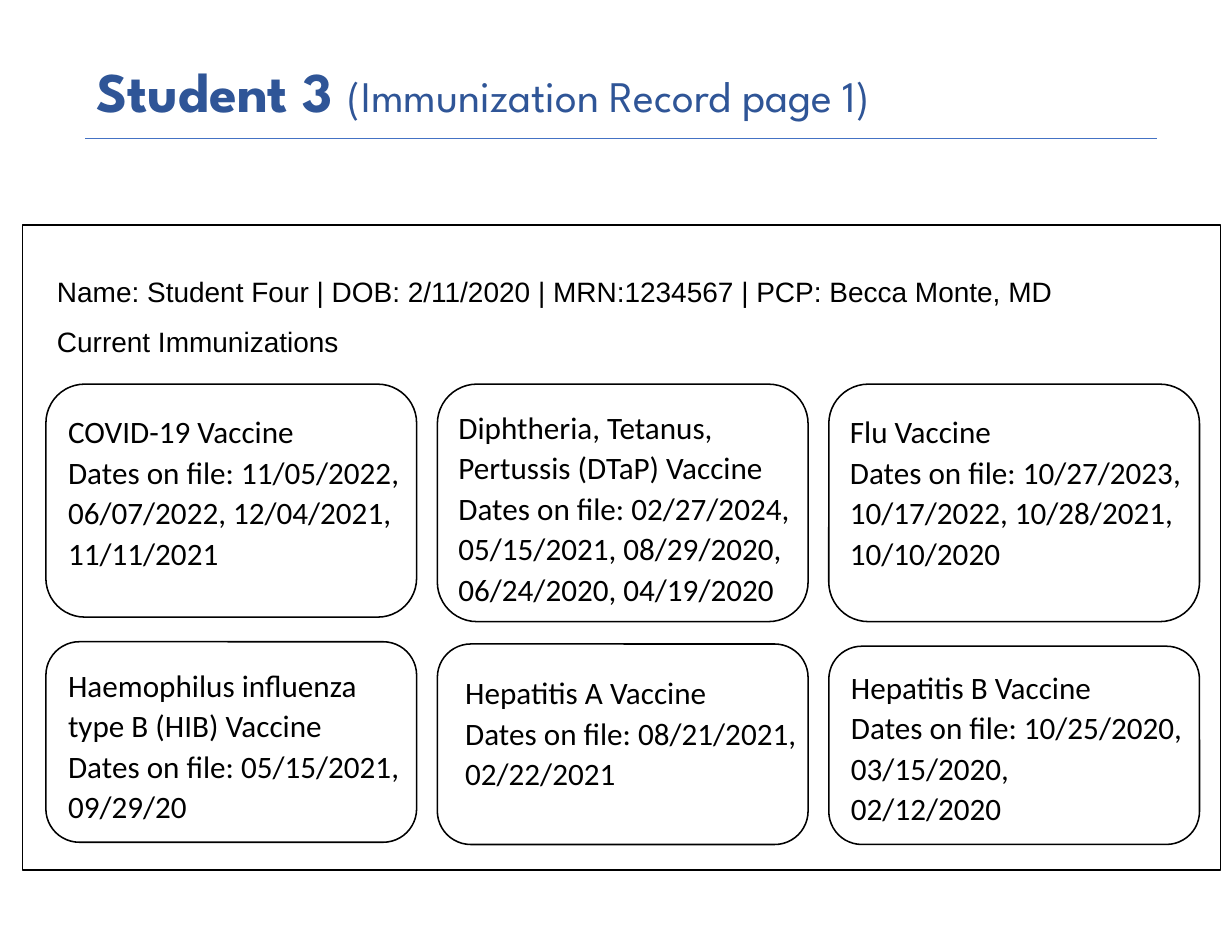
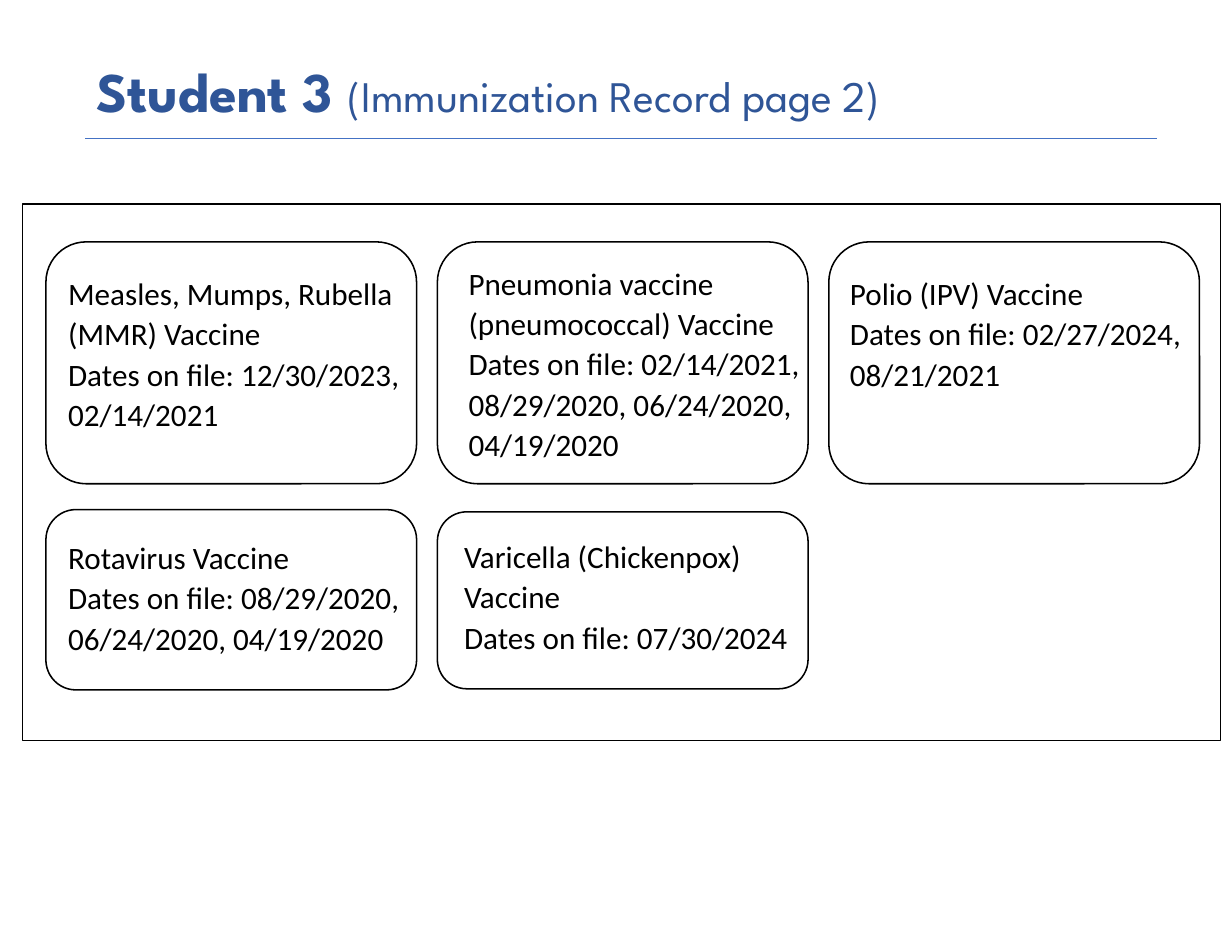
from pptx import Presentation
from pptx.dml.color import RGBColor
from pptx.enum.shapes import MSO_CONNECTOR as CONNECTOR, MSO_SHAPE as SHAPE
from pptx.enum.text import MSO_ANCHOR as ANCHOR
from pptx.util import Inches, Pt
from lxml import etree

# Shared look
BLACK, TITLE_BLUE, RULE_BLUE = "000000", "2F5597", "4472C4"
TITLE_FONT, HEADER_FONT, CARD_FONT = "League Spartan", "Arial", "Calibri"
COLUMNS = [0.41 + 3.495 * column for column in range(3)]
CARD_WIDTH, CARD_TEXT_WIDTH = 3.31, 3.2
DRAWING_NS = "http://schemas.openxmlformats.org/drawingml/2006/main"


def add_text(slide, text, left, top, width, height, font, size, color=BLACK,
             spacing=None, anchor=ANCHOR.TOP, lead="", lead_size=None):
    """Add one paragraph per line; a bold lead may open the first one."""
    box = slide.shapes.add_textbox(*map(Inches, (left, top, width, height)))
    frame = box.text_frame
    frame.word_wrap = True
    frame.vertical_anchor = anchor
    for index, line in enumerate(text.split("\n")):
        paragraph = frame.paragraphs[0] if index == 0 else frame.add_paragraph()
        paragraph.line_spacing = spacing
        pieces = [(line, size, False)]
        if lead and index == 0:
            pieces.insert(0, (lead, lead_size, True))
        for words, points, bold in pieces:
            run = paragraph.add_run()
            run.text = words
            run.font.name = font
            run.font.size = Pt(points)
            run.font.bold = bold
            run.font.color.rgb = RGBColor.from_string(color)


def add_outline(slide, preset, left, top, width, height):
    outline = slide.shapes.add_shape(preset, *map(Inches, (left, top, width, height)))
    outline.shadow.inherit = False
    outline.fill.background()
    outline.line.color.rgb = RGBColor.from_string(BLACK)
    outline.line.width = Pt(1)


# Each card: column, top, height, text indent, text top, wording
page_1_cards = [
    (0, 3.43, 2.08, 0.1, 3.61, "COVID-19 Vaccine\n"
     "Dates on file: 11/05/2022, 06/07/2022, 12/04/2021, 11/11/2021"),
    (1, 3.43, 2.12, 0.09, 3.57, "Diphtheria, Tetanus, Pertussis (DTaP) Vaccine\n"
     "Dates on file: 02/27/2024, 05/15/2021, 08/29/2020, 06/24/2020, 04/19/2020"),
    (2, 3.43, 2.12, 0.09, 3.61, "Flu Vaccine\n"
     "Dates on file: 10/27/2023, 10/17/2022, 10/28/2021,\n10/10/2020"),
    (0, 5.73, 1.79, 0.1, 5.87, "Haemophilus influenza type B (HIB) Vaccine\n"
     "Dates on file: 05/15/2021, 09/29/20"),
    (1, 5.75, 1.79, 0.15, 5.94, "Hepatitis A Vaccine\n"
     "Dates on file: 08/21/2021, 02/22/2021"),
    (2, 5.77, 1.77, 0.1, 5.89, "Hepatitis B Vaccine\n"
     "Dates on file: 10/25/2020, 03/15/2020,\n02/12/2020"),
]
page_2_cards = [
    (0, 2.16, 2.16, 0.1, 2.37, "Measles, Mumps, Rubella (MMR) Vaccine\n"
     "Dates on file: 12/30/2023, 02/14/2021"),
    (1, 2.16, 2.16, 0.18, 2.28, "Pneumonia vaccine (pneumococcal) Vaccine\n"
     "Dates on file: 02/14/2021, 08/29/2020, 06/24/2020, 04/19/2020"),
    (2, 2.16, 2.16, 0.09, 2.37, "Polio (IPV) Vaccine\n"
     "Dates on file: 02/27/2024, 08/21/2021"),
    (0, 4.55, 1.61, 0.1, 4.73, "Rotavirus Vaccine\n"
     "Dates on file: 08/29/2020, 06/24/2020, 04/19/2020"),
    (1, 4.57, 1.58, 0.14, 4.72, "Varicella (Chickenpox) Vaccine\n"
     "Dates on file: 07/30/2024"),
]

# Each page: record frame top and height, patient header, cards
patient_header = ("Name: Student Four | DOB: 2/11/2020 | MRN:1234567 | PCP: Becca Monte, MD\n"
                  "Current Immunizations")
pages = [
    (2.01, 5.76, patient_header, page_1_cards),
    (1.82, 4.79, "", page_2_cards),
]

deck = Presentation()
deck.slide_width, deck.slide_height = Inches(11), Inches(8.5)

for number, (frame_top, frame_height, header, cards) in enumerate(pages, start=1):
    slide = deck.slides.add_slide(deck.slide_layouts[6])

    # Title and rule
    rule = slide.shapes.add_connector(
        CONNECTOR.STRAIGHT, *map(Inches, (0.76, 1.24, 10.33, 1.24)))
    rule.line.color.rgb = RGBColor.from_string(RULE_BLUE)
    rule.line.width = Pt(0.75)
    etree.SubElement(rule._element.spPr, f"{{{DRAWING_NS}}}effectLst")
    add_text(slide, f"(Immunization Record page {number})", 0.76, 0.45, 9.49, 0.79,
             font=TITLE_FONT, size=28, color=TITLE_BLUE, spacing=0.9,
             anchor=ANCHOR.MIDDLE, lead="Student 3 ", lead_size=36)

    # Record frame and patient header
    add_outline(slide, SHAPE.RECTANGLE, 0.2, frame_top, 10.7, frame_height)
    if header:
        add_text(slide, header, 0.41, 2.25, 10.19, 1.31,
                 font=HEADER_FONT, size=18, spacing=1.5)

    # Vaccine cards
    for column, top, height, indent, text_top, wording in cards:
        left = COLUMNS[column]
        add_outline(slide, SHAPE.ROUNDED_RECTANGLE, left, top, CARD_WIDTH, height)
        add_text(slide, wording, left + indent, text_top, CARD_TEXT_WIDTH, 1.54,
                 font=CARD_FONT, size=20, spacing=Pt(26))

deck.save("out.pptx")
